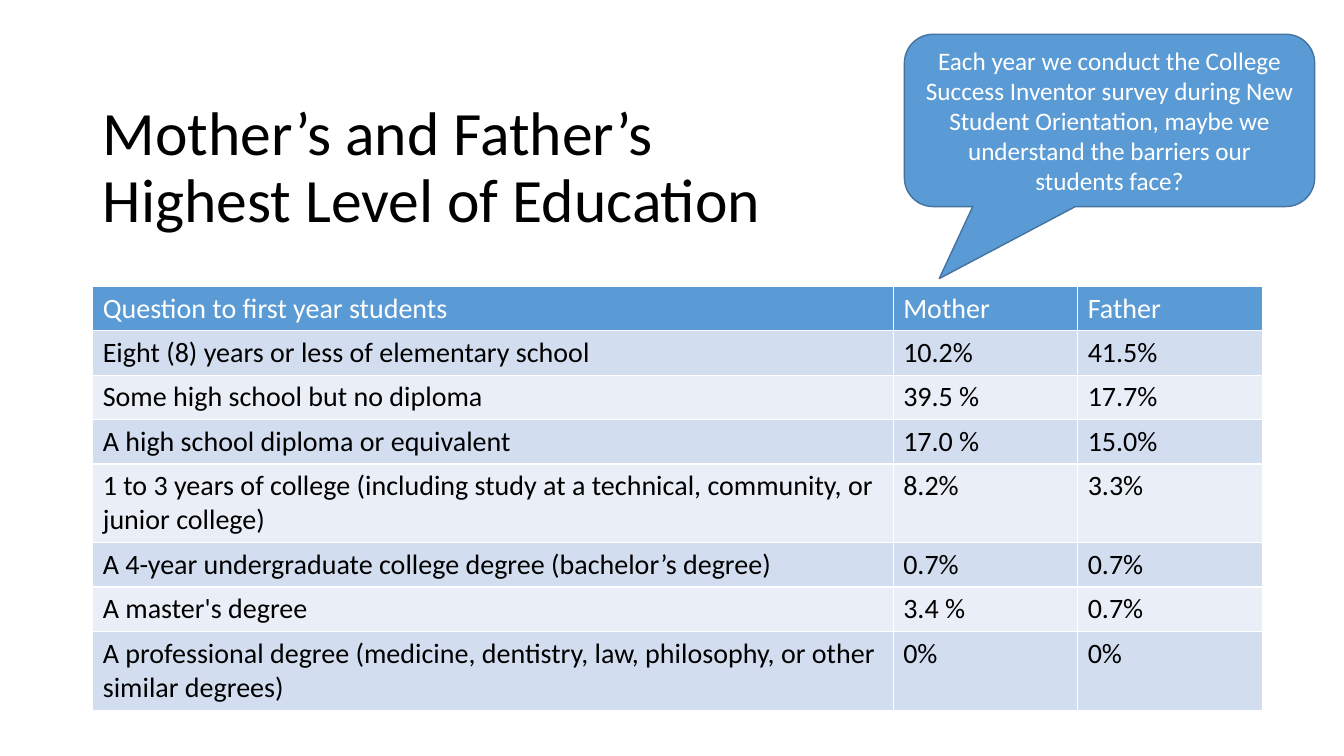
import pptx
import pptx.dml.color
import pptx.enum.shapes
import pptx.enum.text
import pptx.util

WIDTH = pptx.util.Inches(13.33)
HEIGHT = pptx.util.Inches(7.5)
FONT = "Calibri"
BLUE, DARK_BLUE = "5B9BD5", "43739E"
BANDS = ("EAEFF7", "D2DEEF")
BLACK, WHITE = "000000", "FFFFFF"

TITLE = "Mother’s and Father’s\nHighest Level of Education"
REMARK = ("Each year we conduct the College Success Inventor survey during New "
          "Student Orientation, maybe we understand the barriers our students face?")
EDUCATION = [
    ("Question to first year students", "Mother", "Father"),
    ("Eight (8) years or less of elementary school", "10.2%", "41.5%"),
    ("Some high school but no diploma", "39.5 %", "17.7%"),
    ("A high school diploma or equivalent", "17.0 %", "15.0%"),
    ("1 to 3 years of college (including study at a technical, community, "
     "or junior college)", "8.2%", "3.3%"),
    ("A 4-year undergraduate college degree (bachelor’s degree)", "0.7%", "0.7%"),
    ("A master's degree", "3.4 %", "0.7%"),
    ("A professional degree (medicine, dentistry, law, philosophy, or other "
     "similar degrees)", "0%", "0%"),
]
COLUMN_SHARES = (59.56, 13.73, 13.73)
ROW_SHARE, TALL_ROW_SHARE, TALL_ROW = 5.47, 6, 4


def across(share):
    """Turn a percentage of the slide width into a length."""
    return int(WIDTH * share / 100)


def down(share):
    """Turn a percentage of the slide height into a length."""
    return int(HEIGHT * share / 100)


def box(left, top, width, height):
    return across(left), down(top), across(width), down(height)


def rgb(value):
    return pptx.dml.color.RGBColor.from_string(value)


def paint(target, color):
    target.fill.solid()
    target.fill.fore_color.rgb = rgb(color)


def write(tf, text, size, color, align="LEFT", spacing=None):
    """Fill a text frame with one paragraph, breaking lines at newlines."""
    p = tf.paragraphs[0]
    p.alignment = getattr(pptx.enum.text.PP_ALIGN, align)
    p.line_spacing = spacing
    for i, line in enumerate(text.split("\n")):
        if i:
            p.add_line_break()
        r = p.add_run()
        r.text = line
        r.font.name = FONT
        r.font.size = pptx.util.Pt(size)
        r.font.bold = False
        r.font.color.rgb = rgb(color)


def set_title(s, text, place):
    sp = s.shapes.title
    sp.left, sp.top, sp.width, sp.height = place
    tf = sp.text_frame
    tf.auto_size = pptx.enum.text.MSO_AUTO_SIZE.NONE
    tf.vertical_anchor = pptx.enum.text.MSO_ANCHOR.MIDDLE
    write(tf, text, 44, BLACK, spacing=0.9)


def add_education_table(s, left, top):
    heights = [TALL_ROW_SHARE if i == TALL_ROW else ROW_SHARE
               for i in range(len(EDUCATION))]
    place = box(left, top, sum(COLUMN_SHARES), sum(heights))
    table = s.shapes.add_table(len(heights), len(COLUMN_SHARES), *place).table
    for column, share in zip(table.columns, COLUMN_SHARES):
        column.width = across(share)
    for i, (row, texts) in enumerate(zip(table.rows, EDUCATION)):
        row.height = down(heights[i])
        for cell, text in zip(row.cells, texts):
            paint(cell, BANDS[i % 2] if i else BLUE)
            write(cell.text_frame, text, 20, BLACK if i else WHITE)


def add_callout(s, text, place, adjustments):
    kind = pptx.enum.shapes.MSO_SHAPE.ROUNDED_RECTANGULAR_CALLOUT
    sp = s.shapes.add_shape(kind, *place)
    for i, value in enumerate(adjustments):
        sp.adjustments[i] = value
    sp.shadow.inherit = False
    paint(sp, BLUE)
    sp.line.color.rgb = rgb(DARK_BLUE)
    sp.line.width = pptx.util.Pt(1)
    tf = sp.text_frame
    tf.word_wrap = True
    tf.vertical_anchor = pptx.enum.text.MSO_ANCHOR.MIDDLE
    write(tf, text, 18, WHITE, align="CENTER")


def main():
    prs = pptx.Presentation()
    prs.slide_width, prs.slide_height = WIDTH, HEIGHT
    s = prs.slides.add_slide(prs.slide_layouts[5])
    set_title(s, TITLE, box(6.9, 12.67, 86.25, 19.33))
    add_education_table(s, 6.9, 37.87)
    add_callout(s, REMARK, box(67.29, 4.53, 30.53, 22.8), (-0.415, 0.918, 0.167))
    prs.save("out.pptx")


if __name__ == "__main__":
    main()
